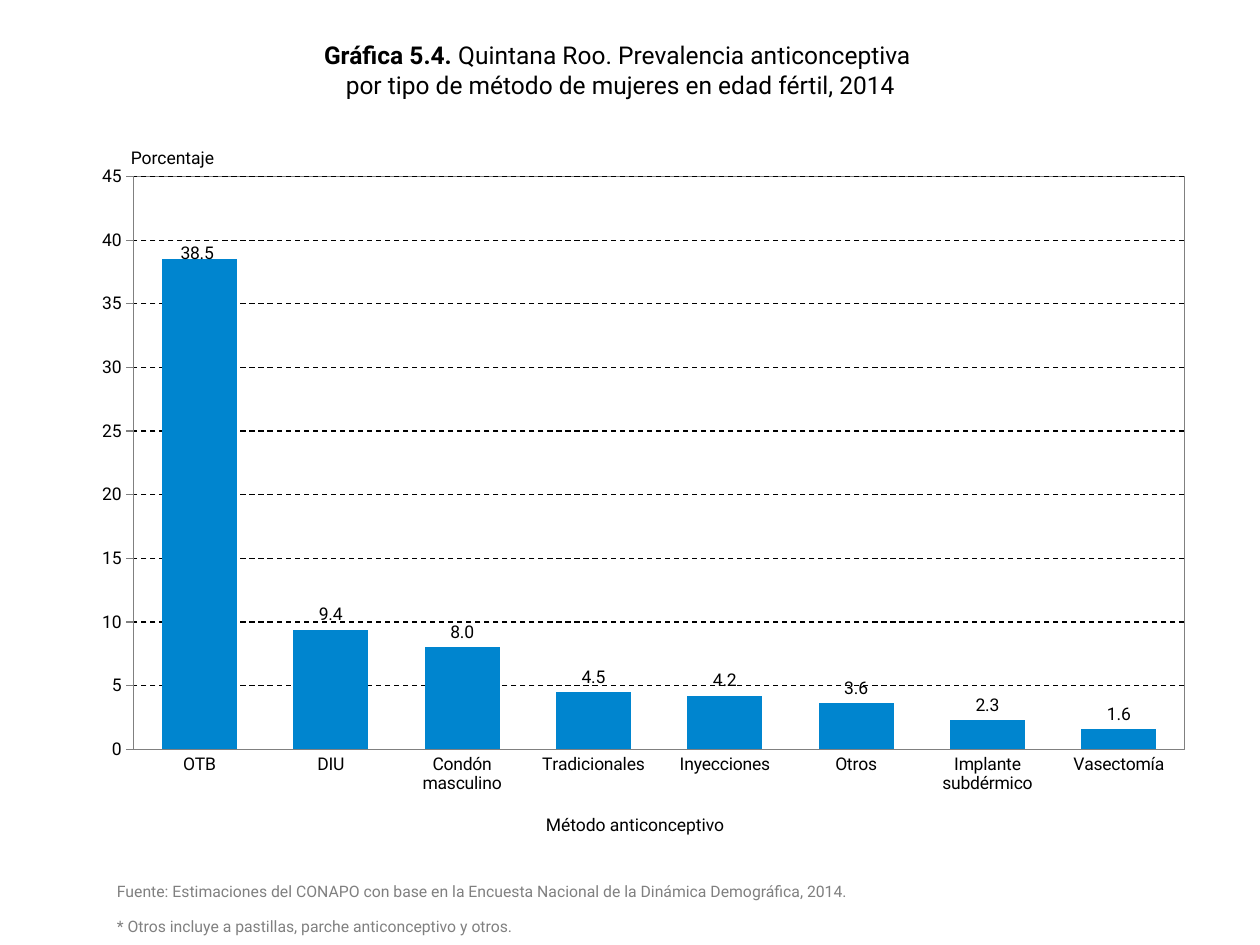
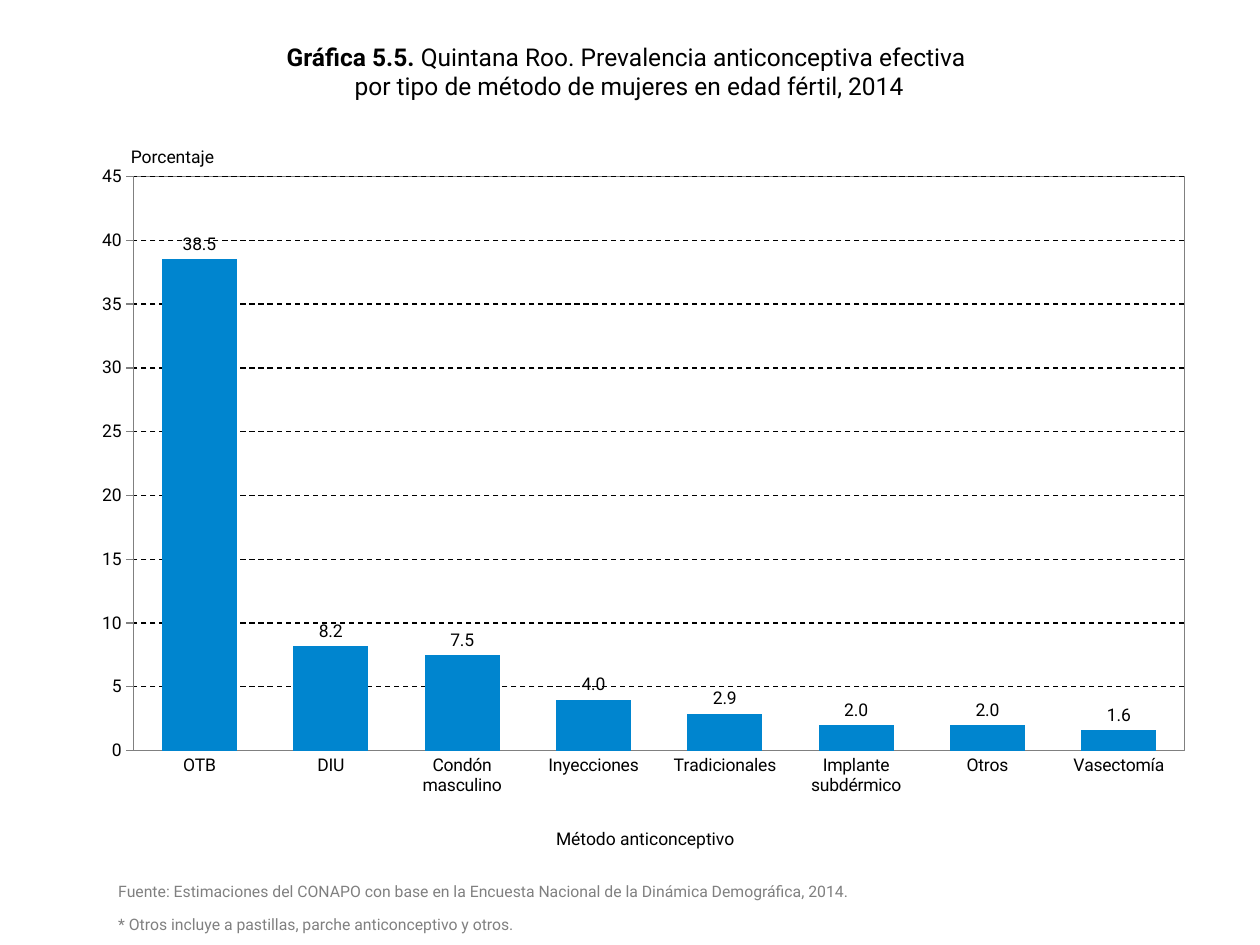
from lxml.etree import fromstring
from pptx import Presentation
from pptx.chart.data import CategoryChartData
from pptx.dml.color import RGBColor
from pptx.enum.chart import XL_CHART_TYPE, XL_LABEL_POSITION, XL_TICK_MARK
from pptx.enum.dml import MSO_LINE
from pptx.enum.text import MSO_ANCHOR, PP_ALIGN
from pptx.util import Pt

FONT, BLACK, GREY, BLUE = "Roboto", "000000", "808080", "0085CF"
CHART = (48.24, 88.56, 640.8, 387.36)
TAIL = "por tipo de método de mujeres en edad fértil, 2014"
UNIT = "Porcentaje"
AXIS = "Método anticonceptivo"
NOTES = (
    "Fuente: Estimaciones del CONAPO con base en la Encuesta Nacional de la Dinámica Demográfica, 2014.",
    "* Otros incluye a pastillas, parche anticonceptivo y otros.",
)
SLIDES = [
    {
        "head": "Gráfica 5.4. ",
        "topic": "Quintana Roo. Prevalencia anticonceptiva ",
        "data": {"OTB": 38.5, "DIU": 9.4, "Condón masculino": 8, "Tradicionales": 4.5,
                 "Inyecciones": 4.2, "Otros": 3.6, "Implante subdérmico": 2.3, "Vasectomía": 1.6},
        "title": (25.2, 9.36, 658.8, 61.2),
        "unit": (67.68, 80.64, 84.96, 19.44),
        "axis": (269.28, 461.52, 187.2, 22.32),
        "notes": (59.76, (500.4, 520.56)),
        "tall": 0.845,
        "shift": (-0.002, 0.013),
    },
    {
        "head": "Gráfica 5.5. ",
        "topic": "Quintana Roo. Prevalencia anticonceptiva efectiva ",
        "data": {"OTB": 38.5, "DIU": 8.2, "Condón masculino": 7.5, "Inyecciones": 4,
                 "Tradicionales": 2.9, "Implante subdérmico": 2, "Otros": 2, "Vasectomía": 1.6},
        "title": (30.24, 15.12, 658.8, 51.12),
        "unit": (67.68, 79.92, 67.68, 19.44),
        "axis": (280.8, 469.44, 175.68, 22.32),
        "notes": (60.48, (500.4, 519.12)),
        "tall": 0.847,
        "shift": None,
    },
]
NS = 'xmlns:c="http://schemas.openxmlformats.org/drawingml/2006/chart"'
FRAME = ('<c:spPr %s xmlns:a="http://schemas.openxmlformats.org/drawingml/2006/main"><a:noFill/>'
         '<a:ln w="9525"><a:solidFill><a:srgbClr val="%s"/></a:solidFill></a:ln></c:spPr>')


def color(code):
    return RGBColor.from_string(code)


def style(font, size, code, bold=False):
    font.name, font.size, font.bold = FONT, Pt(size), bold
    font.color.rgb = color(code)


def write(para, text, size=10, code=BLACK, bold=False, align=None):
    run = para.add_run()
    run.text = text
    style(run.font, size, code, bold)
    if align is not None:
        para.alignment = align


def add_box(slide, spot, text, **form):
    frame = slide.shapes.add_textbox(*map(Pt, spot)).text_frame
    frame.word_wrap = True
    write(frame.paragraphs[0], text, **form)


def add_title(slide, item):
    title = slide.shapes.title
    title.left, title.top, title.width, title.height = map(Pt, item["title"])
    frame = title.text_frame
    frame.vertical_anchor = MSO_ANCHOR.MIDDLE
    para = frame.paragraphs[0]
    write(para, item["head"], size=14, bold=True, align=PP_ALIGN.CENTER)
    write(para, item["topic"], size=14)
    para.add_line_break()
    write(para, TAIL, size=14)


def place(node, index, **parts):
    for old in node.xpath("c:layout"):
        node.remove(old)
    body = "".join(f'<c:{key} val="{val}"/>' for key, val in parts.items())
    node.insert(index, fromstring(
        f"<c:layout {NS}><c:manualLayout>{body}</c:manualLayout></c:layout>"))


def add_bars(slide, item):
    data = CategoryChartData(number_format="0.0")
    data.categories = list(item["data"])
    data.add_series("Series 1", list(item["data"].values()))
    chart = slide.shapes.add_chart(
        XL_CHART_TYPE.COLUMN_CLUSTERED, *map(Pt, CHART), data).chart
    chart.has_legend = chart.has_title = False
    style(chart.font, 10, BLACK)

    base, scale = chart.category_axis, chart.value_axis
    base.major_tick_mark = XL_TICK_MARK.NONE
    scale.major_tick_mark = XL_TICK_MARK.OUTSIDE
    scale.minimum_scale, scale.maximum_scale, scale.major_unit = 0, 45, 5
    scale.tick_labels.number_format = "0"
    scale.tick_labels.number_format_is_linked = False
    grid = scale.major_gridlines.format.line
    grid.dash_style = MSO_LINE.DASH
    for line, code in ((grid, BLACK), (base.format.line, GREY), (scale.format.line, GREY)):
        line.color.rgb, line.width = color(code), Pt(0.75)

    plot = chart.plots[0]
    plot.gap_width, plot.vary_by_categories = 75, False
    bars = plot.series[0]
    bars.format.fill.solid()
    bars.format.fill.fore_color.rgb = color(BLUE)
    marks = bars.data_labels
    marks.show_value = True
    marks.number_format, marks.number_format_is_linked = "0.0", False
    marks.position = XL_LABEL_POSITION.OUTSIDE_END

    area = chart.element.xpath(".//c:plotArea")[0]
    place(area, 0, layoutTarget="inner", xMode="edge", yMode="edge",
          x=0.044, y=0.032, w=0.937, h=item["tall"])
    area.append(fromstring(FRAME % (NS, GREY)))
    if item["shift"]:
        bars.points[0].data_label.position = XL_LABEL_POSITION.OUTSIDE_END
        x, y = item["shift"]
        place(chart.element.xpath(".//c:dLbl")[0], 1, x=x, y=y)


def main():
    deck = Presentation()
    deck.slide_width, deck.slide_height = Pt(720), Pt(540)
    for item in SLIDES:
        slide = deck.slides.add_slide(deck.slide_layouts[5])
        add_title(slide, item)
        add_bars(slide, item)
        add_box(slide, item["unit"], UNIT)
        add_box(slide, item["axis"], AXIS, align=PP_ALIGN.CENTER)
        left, tops = item["notes"]
        for top, note in zip(tops, NOTES):
            add_box(slide, (left, top, 629.28, 18), note, size=9, code=GREY)
    deck.save("out.pptx")


if __name__ == "__main__":
    main()
